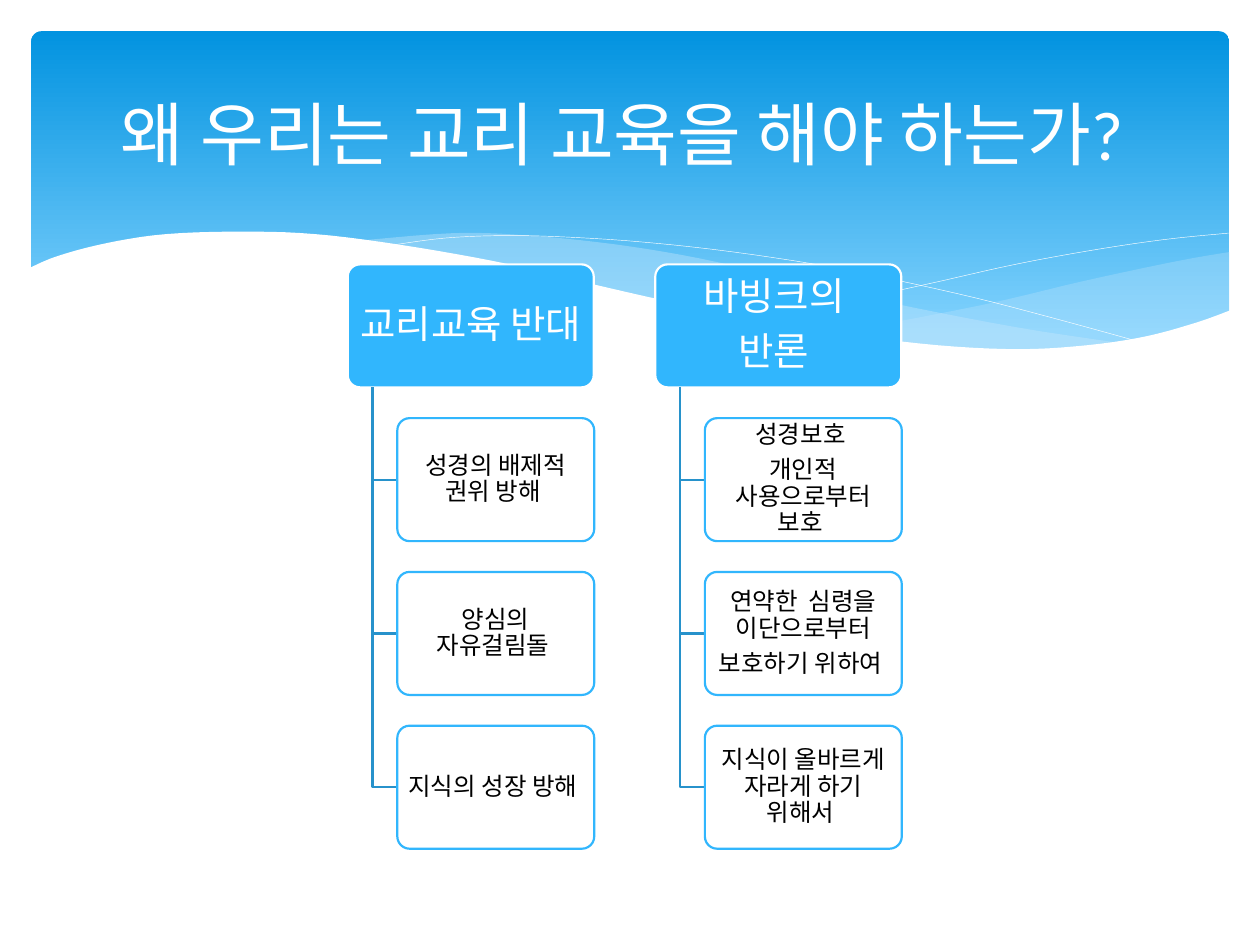
from lxml import etree
from pptx import Presentation
from pptx import util as u
from pptx.dml.color import RGBColor
from pptx.enum import shapes, text
from pptx.oxml.ns import qn

COLORS = {
    "white": "FFFFFF",
    "black": "000000",
    "sky_top": "0293E0",
    "sky_bottom": "83D3FE",
    "mist": "C6E7FC",
    "accent": "31B6FD",
    "branch": "2792CB",
}

RIGHT_WAVE_TOP = [(24.79, 5.08), (23.75, 5.26), (21.87, 5.66), (19.79, 6.15), (16.79, 6.73)]
RIGHT_WAVE_BOTTOM = [(16.79, 6.73), (18.26, 6.91), (20.4, 7.06), (21.92, 6.98),
                     (23.19, 6.78), (24.1, 6.53), (24.79, 6.27)]
MIDDLE_WAVE_TOP = [(22.68, 6.93), (20.5, 6.6), (17.93, 6.1), (15.98, 5.64), (14.1, 5.21),
                   (12.42, 4.93), (10.67, 4.75), (9.17, 4.7), (7.26, 4.85)]
MIDDLE_WAVE_BOTTOM = [(7.26, 4.85), (9.19, 5.16), (11.4, 5.64), (14.38, 6.3), (16.51, 6.71),
                      (18.34, 6.96), (20.22, 7.06), (21.54, 7.04), (22.68, 6.93)]
FALLING_LINE = [(7.85, 4.95), (8.97, 4.8), (10.19, 4.75), (11.43, 4.78), (12.95, 4.88),
                (14.78, 5.08), (16.89, 5.41), (19.3, 5.92), (21.11, 6.38), (23.04, 6.91)]
RISING_LINE = [(15.57, 6.53), (17.65, 5.97), (19, 5.66), (20.47, 5.33), (21.99, 5.05),
               (23.47, 4.83), (24.77, 4.7)]
FRONT_WAVE = [(0.58, 5.41), (1.17, 5.16), (2.16, 4.9), (3.35, 4.72), (4.9, 4.67), (6.35, 4.72),
              (8.03, 4.93), (9.93, 5.26), (11.35, 5.59), (13.44, 6.07), (15.32, 6.45),
              (16.97, 6.73), (18.9, 6.96), (20.55, 7.04), (21.92, 6.96), (23.11, 6.78),
              (24.13, 6.5), (24.82, 6.25)]

COLUMNS = [
    (["교리교육 반대"],
     [["성경의 배제적 권위 방해 "], ["양심의 자유걸림돌 "], ["지식의 성장 방해 "]]),
    (["바빙크의 ", "반론 "],
     [["성경보호 ", "개인적 사용으로부터 보호 "],
      ["연약한  심령을 이단으로부터", "보호하기 위하여 "],
      ["지식이 올바르게 자라게 하기 위해서 "]]),
]

TREE_LEFT, TREE_TOP = 7.01, 5.33
COLUMN_STEP, ROW_STEP = 6.2, 3.1
HEAD_WIDTH, ITEM_WIDTH, BOX_HEIGHT = 4.96, 3.97, 2.48
INDENT = 0.5


def smooth(points, steps=5):
    padded = [points[0], *points, points[-1]]
    curve = []
    for a, b, c, d in zip(padded, padded[1:], padded[2:], padded[3:]):
        for step in range(steps):
            t = step / steps
            curve.append(tuple(
                b[i] + t * (c[i] - a[i]) / 2
                + t * t * (2 * a[i] - 5 * b[i] + 4 * c[i] - d[i]) / 2
                + t ** 3 * (3 * b[i] - a[i] - 3 * c[i] + d[i]) / 2
                for i in (0, 1)))
    return curve + [points[-1]]


class SlideBuilder:
    font = "Calibri"

    def __init__(self, page):
        self.page = page

    def color(self, name):
        return RGBColor.from_string(COLORS[name])

    def paint(self, shape, fill=None, opacity=100, line=None, width=1.25):
        shape.shadow.inherit = False
        if fill:
            shape.fill.solid()
            shape.fill.fore_color.rgb = self.color(fill)
            if opacity < 100:
                tint = shape.element.spPr.find(qn("a:solidFill"))[0]
                etree.SubElement(tint, qn("a:alpha"), val=str(opacity * 1000))
        else:
            shape.fill.background()
        if line:
            shape.line.color.rgb = self.color(line)
            shape.line.width = u.Pt(width)
        else:
            shape.line.fill.background()

    def rounded(self, left, top, width, height, radius):
        box = self.page.shapes.add_shape(
            shapes.MSO_SHAPE.ROUNDED_RECTANGLE,
            u.Cm(left), u.Cm(top), u.Cm(width), u.Cm(height))
        box.adjustments[0] = radius
        return box

    def banner(self, left, top, width, height):
        box = self.rounded(left, top, width, height, 0.03)
        self.paint(box)
        box.fill.gradient()
        box.fill.gradient_angle = 270
        stops = zip(box.fill.gradient_stops, (0, 0.9), ("sky_top", "sky_bottom"))
        for stop, position, name in stops:
            stop.position = position
            stop.color.rgb = self.color(name)

    def outline(self, points, closed=False, **look):
        corners = [(u.Cm(x), u.Cm(y)) for x, y in points]
        pen = self.page.shapes.build_freeform(*corners[0])
        pen.add_line_segments(corners[1:], close=closed)
        self.paint(pen.convert_to_shape(), **look)

    def fill_text(self, frame, lines, size, color):
        frame.word_wrap = True
        frame.auto_size = text.MSO_AUTO_SIZE.NONE
        frame.vertical_anchor = text.MSO_ANCHOR.MIDDLE
        for index, line in enumerate(lines):
            para = frame.add_paragraph() if index else frame.paragraphs[0]
            para.text = line
            para.alignment = text.PP_ALIGN.CENTER
            para.font.name = self.font
            para.font.size = u.Pt(size)
            para.font.color.rgb = self.color(color)

    def box(self, left, top, width, lines, size, color, inset, **look):
        box = self.rounded(left, top, width, BOX_HEIGHT, 0.1)
        self.paint(box, **look)
        frame = box.text_frame
        frame.margin_left = frame.margin_right = u.Cm(inset)
        frame.margin_top = frame.margin_bottom = u.Cm(inset * 0.65)
        self.fill_text(frame, lines, size, color)
        for para in frame.paragraphs:
            para.line_spacing = 0.9
            para.space_after = u.Pt(size * 0.35)

    def column(self, left, heading, items):
        self.box(left, TREE_TOP, HEAD_WIDTH, heading, 22, "white", 0.12,
                 fill="accent", line="white")
        trunk, item_left = left + INDENT, left + 2 * INDENT
        for row, lines in enumerate(items, 1):
            top = TREE_TOP + row * ROW_STEP
            middle = top + BOX_HEIGHT / 2
            self.outline([(trunk, TREE_TOP + BOX_HEIGHT), (trunk, middle), (item_left, middle)],
                         line="branch")
            self.box(item_left, top, ITEM_WIDTH, lines, 14, "black", 0.08,
                     fill="white", opacity=90, line="accent")

    def title(self, wording, left, top, width, height):
        title = self.page.shapes.title
        title.left, title.top = u.Cm(left), u.Cm(top)
        title.width, title.height = u.Cm(width), u.Cm(height)
        self.fill_text(title.text_frame, [wording], 39.6, "white")
        self.page.shapes.element.append(title.element)


def main():
    deck = Presentation()
    deck.slide_width, deck.slide_height = u.Cm(25.4), u.Cm(19.05)
    builder = SlideBuilder(deck.slides.add_slide(deck.slide_layouts[5]))

    builder.banner(0.63, 0.63, 24.15, 6.86)
    builder.outline(smooth(RIGHT_WAVE_TOP) + smooth(RIGHT_WAVE_BOTTOM), True,
                    fill="mist", opacity=29)
    builder.outline(smooth(MIDDLE_WAVE_TOP) + smooth(MIDDLE_WAVE_BOTTOM), True,
                    fill="mist", opacity=40)
    for line in (FALLING_LINE, RISING_LINE):
        builder.outline(smooth(line), line="white", width=0.25)
    builder.outline(smooth(FRONT_WAVE) + [(24.82, 8.36), (0.58, 8.36)], True, fill="white")

    for index, (heading, items) in enumerate(COLUMNS):
        builder.column(TREE_LEFT + index * COLUMN_STEP, heading, items)
    builder.title("왜 우리는 교리 교육을 해야 하는가? ", 1.27, 0.94, 22.86, 3.48)
    deck.save("out.pptx")


if __name__ == "__main__":
    main()
